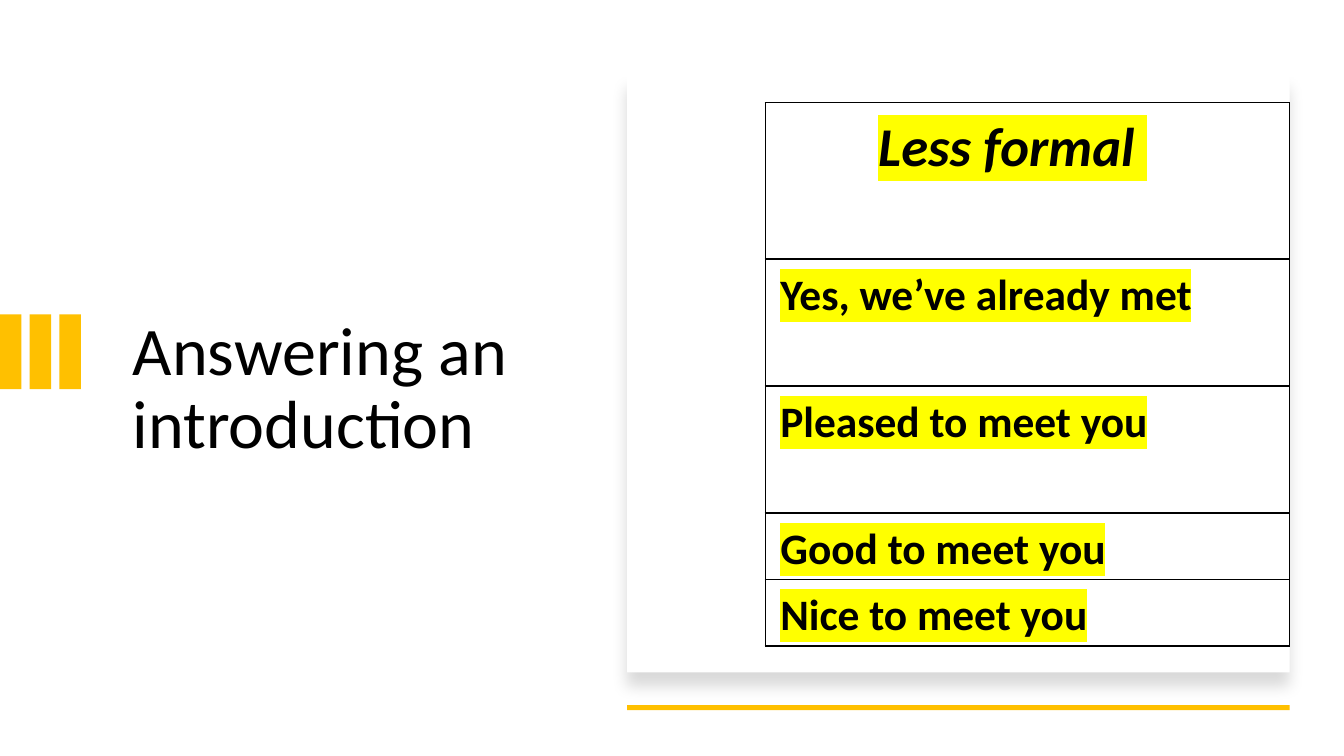
from lxml.etree import SubElement as Sub
from pptx import Presentation
from pptx.dml.color import RGBColor
from pptx.enum.shapes import MSO_SHAPE as Shape
from pptx.oxml.ns import qn
from pptx.util import Inches, Pt

GOLD, WHITE, BLACK, YELLOW = "FFC000", "FFFFFF", "000000", "FFFF00"


def rgb(code):
    return RGBColor.from_string(code)


def paint(parent, code):
    """Add a solid fill to an XML node and return its colour node."""
    fill = Sub(parent, qn("a:solidFill"))
    return Sub(fill, qn("a:srgbClr"), val=code)


class Deck:
    """Holds the style and the current slide; places are percent of its size."""
    font = "Calibri"

    def __init__(self, wide, high):
        self.prs = Presentation()
        self.prs.slide_width = Inches(wide)
        self.prs.slide_height = Inches(high)
        self.slide = self.prs.slides.add_slide(self.prs.slide_layouts[6])
        self.shapes = self.slide.shapes

    def x(self, share):
        return round(self.prs.slide_width * share / 100)

    def y(self, share):
        return round(self.prs.slide_height * share / 100)

    def box(self, left, top, wide, high):
        return self.x(left), self.y(top), self.x(wide), self.y(high)

    def style(self, run, size, bold=False, italic=False, mark=None):
        font = run.font
        font.size, font.name = Pt(size), self.font
        font.bold, font.italic = bold, italic
        font.color.rgb = rgb(BLACK)
        if mark:
            props = run._r.get_or_add_rPr()
            glow = Sub(props, qn("a:highlight"))
            Sub(glow, qn("a:srgbClr"), val=mark)
            props.find(qn("a:solidFill")).addnext(glow)

    def rect(self, place, fill):
        shape = self.shapes.add_shape(Shape.RECTANGLE, *self.box(*place))
        shape.shadow.inherit = False
        shape.fill.solid()
        shape.fill.fore_color.rgb = rgb(fill)
        shape.line.fill.background()
        return shape

    def card(self, place):
        """Draw a white panel with a soft shadow below it."""
        shape = self.rect(place, WHITE)
        effects = shape._element.spPr.find(qn("a:effectLst"))
        shade = Sub(effects, qn("a:outerShdw"), blurRad=str(Pt(11)),
                    dist=str(Pt(10)), dir="5400000", algn="t", rotWithShape="0")
        tint = Sub(shade, qn("a:srgbClr"), val=BLACK)
        Sub(tint, qn("a:alpha"), val="15000")

    def title(self, place, text, size):
        frame = self.shapes.add_textbox(*self.box(*place)).text_frame
        frame.word_wrap = True
        frame.text = text
        para = frame.paragraphs[0]
        para.line_spacing = 0.9
        self.style(para.runs[0], size)

    def edge(self, cell):
        props = cell._tc.get_or_add_tcPr()
        for side in ("lnL", "lnR", "lnT", "lnB"):
            paint(Sub(props, qn("a:" + side), w=str(Pt(1))), BLACK)
        cell.fill.background()

    def table(self, left, top, wide, rows):
        """Draw one column; each row is its height and its (text, size, italic) runs."""
        place = self.box(left, top, wide, sum(high for high, _ in rows))
        table = self.shapes.add_table(len(rows), 1, *place).table
        table.first_row = table.horz_banding = False
        for row, (high, parts) in zip(table.rows, rows):
            row.height = self.y(high)
            cell = row.cells[0]
            cell.margin_left = cell.margin_right = Inches(0.15)
            cell.margin_top, cell.margin_bottom = Inches(0.02), 0
            self.edge(cell)
            para = cell.text_frame.paragraphs[0]
            para.line_spacing = 1.15
            stops = Sub(para._p.get_or_add_pPr(), qn("a:tabLst"))
            Sub(stops, qn("a:tab"), pos=str(Inches(0.97)), algn="l")
            for text, size, italic in parts:
                run = para.add_run()
                run.text = text
                self.style(run, size, True, italic, YELLOW)


def main():
    deck = Deck(13.33, 7.5)
    deck.title((9.15, 41.2, 33.08, 28.67), "Answering an introduction", 48.6)
    bars = [deck.rect((2.21 * i, 41.6, 1.6, 9.87), GOLD) for i in range(3)]
    deck.shapes.add_group_shape(bars)
    left, wide = 46.66, 49.29
    deck.card((left, 9.87, wide, 79.07))
    deck.rect((left, 93.27, wide, 0.67), GOLD)
    replies = [(16.8, "Yes, we’ve already met"), (16.8, "Pleased to meet you"),
               (8.8, "Good to meet you"), (8.8, "Nice to meet you")]
    rows = [(20.67, [("\t", 31, False), ("Less formal ", 39, True)])]
    rows += [(high, [(text, 31, False)]) for high, text in replies]
    deck.table(56.94, 13.6, 39.01, rows)
    deck.prs.save("out.pptx")


if __name__ == "__main__":
    main()
